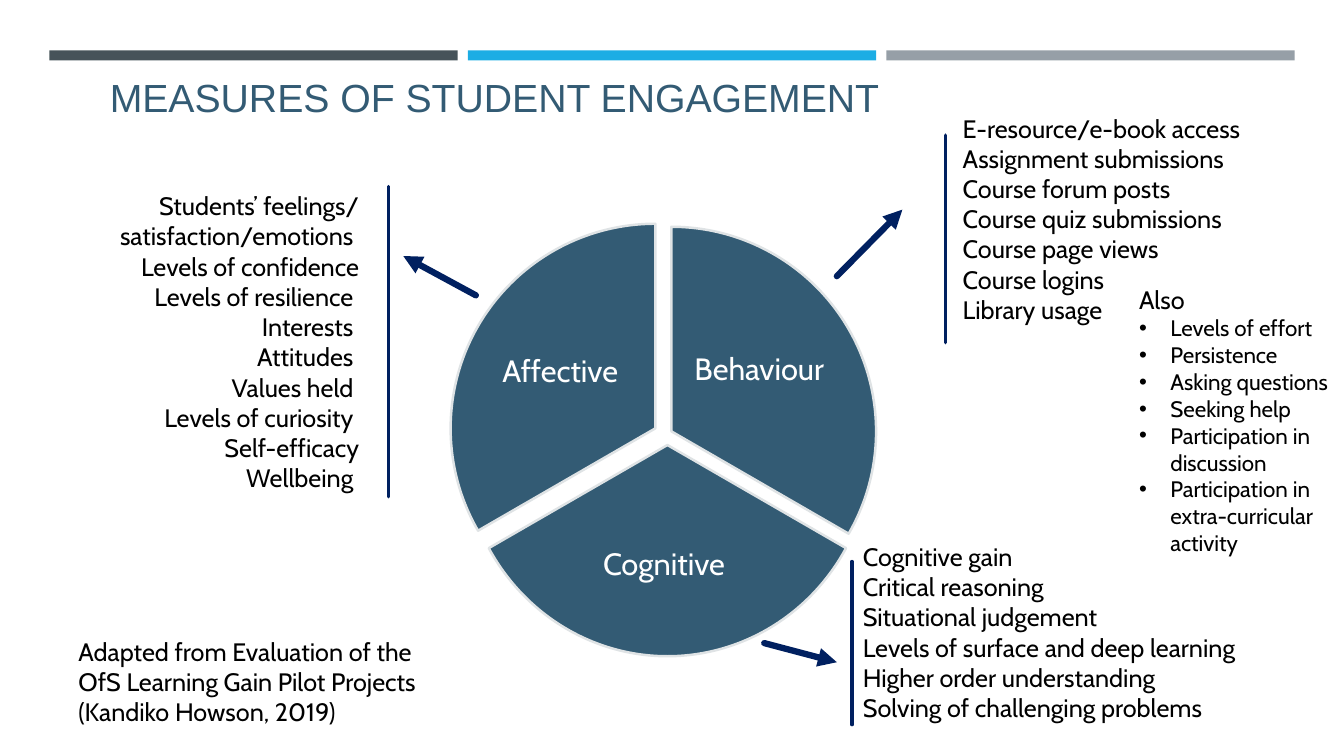
"""Build the slide on measures of student engagement."""
from pptx import Presentation
from pptx import util as u
from pptx.dml.color import RGBColor
from pptx.enum import shapes, text
from pptx.oxml import ns, xmlchemy

INK = {
    "slate": "465359", "sky": "1CADE4", "grey": "969FA7", "teal": "335B74",
    "edge": "DFE3E5", "navy": "002060", "black": "000000", "white": "FFFFFF",
}
LEFT, MID, RIGHT = text.PP_ALIGN.LEFT, text.PP_ALIGN.CENTER, text.PP_ALIGN.RIGHT
TOP, CORE, LOW = text.MSO_ANCHOR.TOP, text.MSO_ANCHOR.MIDDLE, text.MSO_ANCHOR.BOTTOM


def add(host, tag, **atts):
    """Append a DrawingML element to the host and return it."""
    node = xmlchemy.OxmlElement(tag)
    for key, val in atts.items():
        node.set(key, val)
    host.append(node)
    return node


class Board:
    """Hold the style and the slide that is being drawn."""

    def __init__(self, slide, font="Cabin", size=18):
        """Keep the slide and its default font."""
        self.shapes = slide.shapes
        self.font = font
        self.size = size

    def shape(self, kind, box, fill, edge=None):
        """Add a filled preset shape."""
        item = self.shapes.add_shape(kind, *map(u.Inches, box))
        item.shadow.inherit = False
        item.fill.solid()
        item.fill.fore_color.rgb = RGBColor.from_string(INK[fill])
        if edge:
            item.line.color.rgb = RGBColor.from_string(INK[edge])
            item.line.width = u.Pt(1.75)
        else:
            item.line.fill.background()
        return item

    def slice(self, box, start, end):
        """Add a pie slice between two angles in degrees."""
        pie = self.shape(shapes.MSO_SHAPE.PIE, box, "teal", "edge")
        for i, angle in enumerate((start, end)):
            pie.adjustments[i] = angle * 0.6

    def text(self, box, lines, size=None, font=None, ink="black",
             align=LEFT, anchor=TOP, pad=None, space=1.0):
        """Add a text box with one paragraph per line."""
        frame = self.shapes.add_textbox(*map(u.Inches, box)).text_frame
        frame.word_wrap = True
        frame.vertical_anchor = anchor
        if pad is not None:
            frame.margin_left = frame.margin_right = u.Inches(pad)
            frame.margin_top = frame.margin_bottom = u.Inches(pad)
        frame.text = "\n".join(lines)
        for para in frame.paragraphs:
            para.alignment = align
            para.line_spacing = space
            for run in para.runs:
                run.font.name = font or self.font
                run.font.size = u.Pt(size or self.size)
                run.font.color.rgb = RGBColor.from_string(INK[ink])
        return frame

    def bullet(self, paras, size, indent):
        """Turn paragraphs into bullets with a hanging indent."""
        for para in paras:
            para.runs[0].font.size = u.Pt(size)
            props = para._p.get_or_add_pPr()
            props.set("marL", str(u.Inches(indent)))
            props.set("indent", str(-u.Inches(indent)))
            add(props, "a:buFont", typeface="Arial")
            add(props, "a:buChar", char="•")

    def line(self, start, end, width=2.25, arrow=False):
        """Add a round-capped line, with an arrowhead if asked."""
        item = self.shapes.add_connector(
            shapes.MSO_CONNECTOR.STRAIGHT, *map(u.Inches, start + end))
        item.line.color.rgb = RGBColor.from_string(INK["navy"])
        item.line.width = u.Pt(width)
        props = item._element.spPr
        stroke = props.find(ns.qn("a:ln"))
        stroke.set("cap", "rnd")
        if arrow:
            add(stroke, "a:tailEnd", type="triangle")
        add(props, "a:effectLst")


def main():
    """Draw the slide and save it."""
    deck = Presentation()
    deck.slide_width, deck.slide_height = u.Inches(13.33), u.Inches(7.5)
    board = Board(deck.slides.add_slide(deck.slide_layouts[6]))

    for i, ink in enumerate(("slate", "sky", "grey")):
        board.shape(shapes.MSO_SHAPE.RECTANGLE, (0.49 + 4.15 * i, 0.5, 4.05, 0.1), ink)
    board.text((0.99, 0.15, 11.69, 1.09), ["MEASURES OF STUDENT ENGAGEMENT"],
               size=28, font="Arial", ink="teal", anchor=LOW)

    parts = [
        ("Behaviour", (4.63, 2.25, 4.06, 4.06), 270, 30, (6.84, 3, 1.38, 1.35)),
        ("Cognitive ", (4.59, 2.32, 4.06, 4.19), 30, 150, (5.7, 4.96, 1.84, 1.3)),
        ("Affective ", (4.47, 2.22, 4.06, 4.06), 150, 270, (4.9, 3.02, 1.38, 1.35)),
    ]
    for name, box, start, end, spot in parts:
        board.slice(box, start, end)
        board.text(spot, [name], size=22, ink="white", align=MID,
                   anchor=CORE, pad=0.03, space=0.9)

    board.text((9.45, 1.07, 3.52, 2.22), [
        "E-resource/e-book access", "Assignment submissions",
        "Course forum posts", "Course quiz submissions",
        "Course page views", "Course logins", "Library usage"])
    board.text((0.03, 1.84, 3.63, 3.74), [
        "Students’ feelings/ satisfaction/emotions ", "Levels of confidence",
        "Levels of resilience ", "Interests ", "Attitudes ", "Values held ",
        "Levels of curiosity ", "Self-efficacy", "Wellbeing "], align=RIGHT)
    board.text((8.46, 5.32, 3.96, 1.92), [
        "Cognitive gain", "Critical reasoning", "Situational judgement",
        "Levels of surface and deep learning", "Higher order understanding",
        "Solving of challenging problems"])
    also = board.text((11.2, 2.77, 2.46, 2.83), [
        "Also", "Levels of effort", "Persistence", "Asking questions",
        "Seeking help", "Participation in discussion",
        "Participation in extra-curricular activity"])
    board.bullet(also.paragraphs[1:], 16, 0.31)
    board.text((0.68, 6.26, 3.68, 1.01), [
        "Adapted from Evaluation of the OfS Learning Gain Pilot Projects "
        "(Kandiko Howson, 2019)"])

    for x, top, end in ((9.38, 1.34, 3.4), (3.85, 1.85, 4.93), (8.45, 5.57, 7.19)):
        board.line((x, top), (x, end))
    for start, end in (((8.3, 2.74), (8.95, 2.08)), ((4.72, 2.93), (4, 2.54)),
                       ((7.58, 6.38), (8.3, 6.57))):
        board.line(start, end, width=4.5, arrow=True)

    deck.save("out.pptx")


if __name__ == "__main__":
    main()
